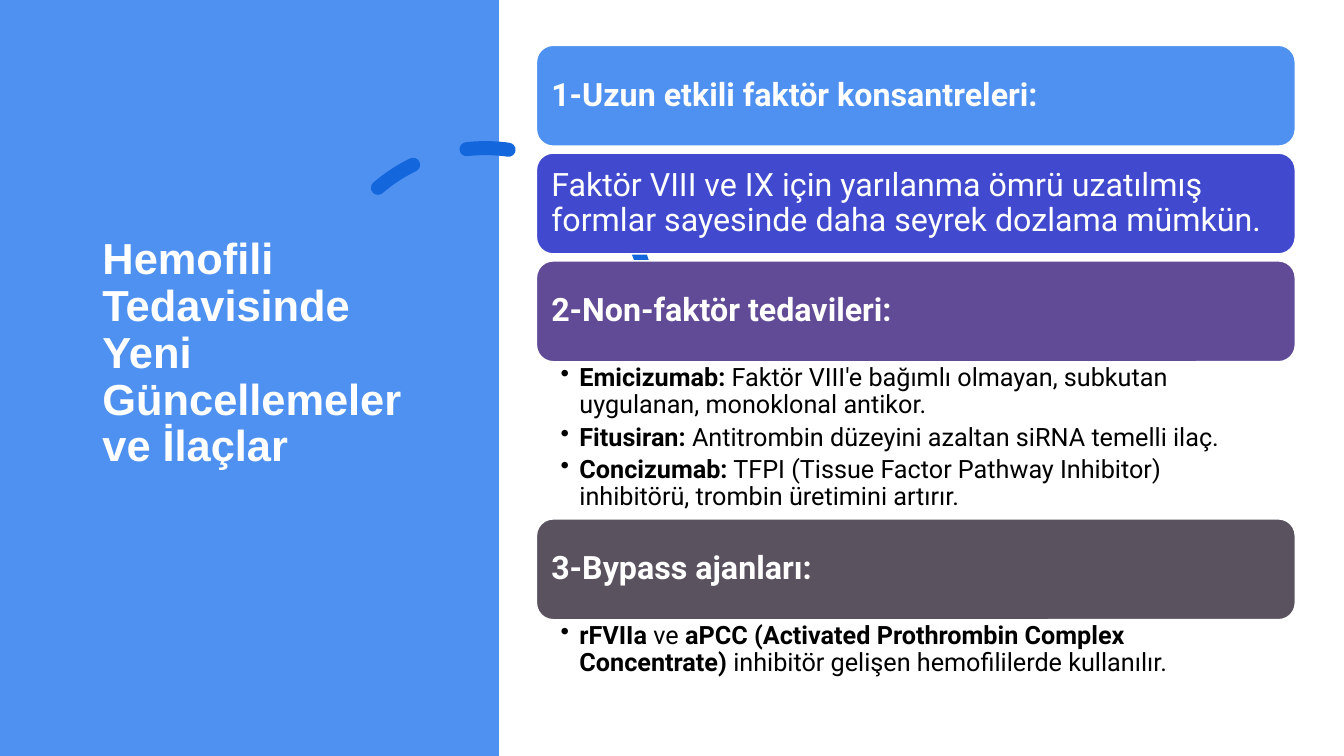
from lxml.etree import SubElement
from pptx import Presentation
from pptx.dml.color import RGBColor
from pptx.enum.dml import MSO_LINE
from pptx.enum.shapes import MSO_SHAPE
from pptx.enum.text import MSO_ANCHOR, PP_ALIGN
from pptx.oxml.ns import qn
from pptx.util import Pt

COLOURS = {
    "white": "FFFFFF", "black": "000000", "blue": "4E91F0", "arc": "1366DC",
    "indigo": "414ACE", "purple": "614B96", "grey": "5B5260",
}
CARD_HEIGHT = 72
CARD_GAP = 5
BULLET_INDENT = 13.5

# Each text is a list of (words, bold) runs
TITLE = [("Hemofili Tedavisinde Yeni Güncellemeler ve İlaçlar", True)]
# Each section: card colour, card runs, height of the bullet list, bullets
SECTIONS = [
    ("blue", [("1-Uzun etkili faktör konsantreleri:", True)], 0, []),
    ("indigo", [("Faktör VIII ve IX için yarılanma ömrü uzatılmış formlar "
                 "sayesinde daha seyrek dozlama mümkün.", False)], 0, []),
    ("purple", [("2-Non-faktör tedavileri:", True)], 112.3, [
        [("Emicizumab:", True),
         (" Faktör VIII'e bağımlı olmayan, subkutan uygulanan, monoklonal antikor.", False)],
        [("Fitusiran:", True),
         (" Antitrombin düzeyini azaltan siRNA temelli ilaç.", False)],
        [("Concizumab:", True),
         (" TFPI (Tissue Factor Pathway Inhibitor) inhibitörü, "
          "trombin üretimini artırır.", False)],
    ]),
    ("grey", [("3-Bypass ajanları:", True)], 44, [
        [("rFVIIa", True), (" ve ", False),
         ("aPCC (Activated Prothrombin Complex Concentrate)", True),
         (" inhibitör gelişen hemofililerde kullanılır.", False)],
    ]),
]


def colour(name):
    return RGBColor.from_string(COLOURS[name])


def add_runs(paragraph, runs, font, size, colour_name):
    paragraph.alignment = PP_ALIGN.LEFT
    paragraph.line_spacing = 0.9
    for words, bold in runs:
        run = paragraph.add_run()
        run.text = words
        run.font.name = font
        run.font.size = Pt(size)
        run.font.bold = bold
        run.font.color.rgb = colour(colour_name)


def set_frame(frame, anchor, left, top, right, bottom):
    frame.word_wrap = True
    frame.vertical_anchor = anchor
    frame.margin_left, frame.margin_top = Pt(left), Pt(top)
    frame.margin_right, frame.margin_bottom = Pt(right), Pt(bottom)


def add_filled_shape(slide, kind, box, fill):
    shape = slide.shapes.add_shape(kind, *map(Pt, box))
    shape.shadow.inherit = False
    shape.fill.solid()
    shape.fill.fore_color.rgb = colour(fill)
    return shape


def add_title_panel(slide, left, top, width, height):
    # Blue panel
    panel = add_filled_shape(slide, MSO_SHAPE.RECTANGLE, (left, top, width, height), "blue")
    panel.line.fill.background()

    # Dashed arc across the panel's right edge
    arc = slide.shapes.add_shape(MSO_SHAPE.ARC, Pt(left + 229), Pt(top + 105.8),
                                 Pt(235.4), Pt(235.4))
    arc.shadow.inherit = False
    arc.adjustments[0] = 146.129
    arc.adjustments[1] = 0
    arc.rotation = 345.8
    arc.fill.background()
    arc.line.color.rgb = colour("arc")
    arc.line.width = Pt(10)
    arc.line.dash_style = MSO_LINE.DASH
    arc.element.spPr.find(qn("a:ln")).set("cap", "rnd")

    # Title, brought in front of the panel
    title = slide.shapes.title
    title.left, title.top = Pt(left + 66), Pt(top + 50.4)
    title.width, title.height = Pt(232.6), Pt(438.5)
    set_frame(title.text_frame, MSO_ANCHOR.MIDDLE, 7.2, 3.6, 7.2, 37)
    add_runs(title.text_frame.paragraphs[0], TITLE, "Arial", 31, "white")
    panel.element.getparent().append(title.element)


def add_card(slide, left, top, width, fill, runs):
    card = add_filled_shape(slide, MSO_SHAPE.ROUNDED_RECTANGLE,
                            (left, top, width, CARD_HEIGHT), fill)
    card.line.color.rgb = colour("white")
    card.line.width = Pt(1)
    set_frame(card.text_frame, MSO_ANCHOR.MIDDLE, 7.2, 7.2, 7.2, 7.2)
    add_runs(card.text_frame.paragraphs[0], runs, "Roboto", 23, "white")


def add_bullets(slide, left, top, width, height, bullets):
    frame = slide.shapes.add_textbox(Pt(left), Pt(top), Pt(width), Pt(height)).text_frame
    set_frame(frame, MSO_ANCHOR.TOP, 17.2, 2.2, 13, 2.2)
    for index, runs in enumerate(bullets):
        paragraph = frame.add_paragraph() if index else frame.paragraphs[0]
        add_runs(paragraph, runs, "Roboto", 18, "black")
        paragraph.space_after = Pt(3.6)
        properties = paragraph._p.get_or_add_pPr()
        properties.set("marL", str(Pt(BULLET_INDENT)))
        properties.set("indent", str(-Pt(BULLET_INDENT)))
        SubElement(properties, qn("a:buChar")).set("char", "•")


def add_sections(slide, left, top, width):
    for fill, heading, list_height, bullets in SECTIONS:
        add_card(slide, left, top, width, fill, heading)
        top += CARD_HEIGHT
        if bullets:
            add_bullets(slide, left, top, width, list_height, bullets)
            top += list_height
        else:
            top += CARD_GAP


def main():
    presentation = Presentation()
    presentation.slide_width, presentation.slide_height = Pt(960), Pt(540)
    slide = presentation.slides.add_slide(presentation.slide_layouts[5])
    add_title_panel(slide, 0, 0, 356.4, 540)
    add_sections(slide, 383.2, 32.4, 542)
    presentation.save("out.pptx")


if __name__ == "__main__":
    main()
